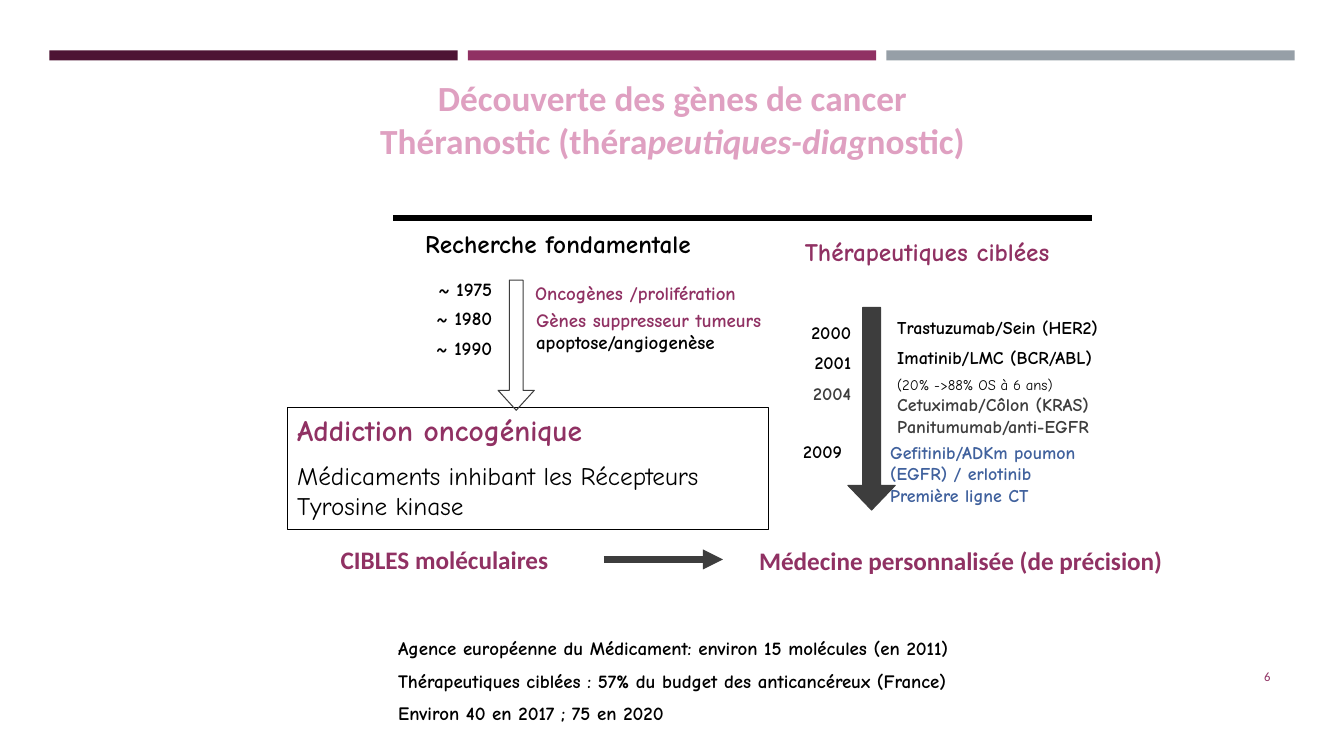
from lxml import etree
from pptx import Presentation
from pptx.dml.color import RGBColor
from pptx.enum import shapes, text
from pptx.oxml import ns
from pptx.util import Inches, Pt

COLORS = {
    "plum": "903163", "dark plum": "4D1434", "steel": "969FA7", "pink": "DFA0C1",
    "black": "000000", "charcoal": "3D3D3D", "blue": "40619D",
}
COMIC, CALIBRI = "Comic Neue", "Calibri"
LEFT, CENTER, RIGHT = text.PP_ALIGN.LEFT, text.PP_ALIGN.CENTER, text.PP_ALIGN.RIGHT
TOP, MIDDLE, BOTTOM = text.MSO_ANCHOR.TOP, text.MSO_ANCHOR.MIDDLE, text.MSO_ANCHOR.BOTTOM


def rgb(name):
    return RGBColor.from_string(COLORS[name])


def set_attributes(target, values):
    for name, value in values.items():
        setattr(target, name, value)


def entry(*runs, before=0, **font):
    """Describe a paragraph; a run is a string or a (string, font changes) pair."""
    return {"runs": runs, "before": before, "font": font}


def write(frame, entries, align=LEFT, anchor=TOP, wrap=True, spacing=1.0):
    set_attributes(frame, {"word_wrap": wrap, "vertical_anchor": anchor,
                           "auto_size": text.MSO_AUTO_SIZE.NONE})
    for index, item in enumerate(entries):
        paragraph = frame.add_paragraph() if index else frame.paragraphs[0]
        set_attributes(paragraph, {"alignment": align, "line_spacing": spacing,
                                   "space_before": Pt(item["before"])})
        for piece in item["runs"]:
            content, changes = piece if isinstance(piece, tuple) else (piece, {})
            style = {"name": COMIC, "size": 13.5, "bold": True, "color": "black",
                     **item["font"], **changes}
            color = style.pop("color")
            style["size"] = Pt(style["size"])
            for number, line in enumerate(content.split("\n")):
                if number:
                    paragraph.add_line_break()
                run = paragraph.add_run()
                run.text = line
                set_attributes(run.font, style)
                run.font.color.rgb = rgb(color)


def add_text(slide, box, *entries, **layout):
    shape = slide.shapes.add_textbox(*map(Inches, box))
    write(shape.text_frame, entries, **layout)


def add_shape(slide, kind, box, fill=None, line=None, adjustments=()):
    shape = slide.shapes.add_shape(kind, *map(Inches, box))
    shape.shadow.inherit = False
    for index, value in enumerate(adjustments):
        shape.adjustments[index] = value
    if fill:
        shape.fill.solid()
        shape.fill.fore_color.rgb = rgb(fill)
    else:
        shape.fill.background()
    if line:
        shape.line.color.rgb = rgb(line)
        shape.line.width = Pt(0.75)
    else:
        shape.line.fill.background()
    return shape


def add_line(slide, left, right, height, color, width, arrow=False):
    line = slide.shapes.add_connector(
        shapes.MSO_CONNECTOR.STRAIGHT, *map(Inches, (left, height, right, height)))
    line.line.color.rgb = rgb(color)
    line.line.width = Pt(width)
    if arrow:
        etree.SubElement(line.line._get_or_add_ln(), ns.qn("a:tailEnd"), type="triangle")
    etree.SubElement(line._element.spPr, ns.qn("a:effectLst"))


def add_header(slide):
    for index, color in enumerate(("dark plum", "plum", "steel")):
        add_shape(slide, shapes.MSO_SHAPE.RECTANGLE,
                  (0.49 + 4.15 * index, 0.5, 4.05, 0.1), color)
    title = slide.shapes.title
    set_attributes(title, {"left": Inches(0.64), "top": Inches(0.7),
                           "width": Inches(12.06), "height": Inches(0.95)})
    heading = entry("Découverte des gènes de cancer\nThéranostic (théra",
                    ("peutiques-diag", {"italic": True}), "nostic)",
                    name=CALIBRI, size=25.2, color="pink")
    write(title.text_frame, [heading], align=CENTER, anchor=BOTTOM)
    add_line(slide, 3.9, 10.83, 2.16, "black", 4.5)


def add_research(slide):
    add_text(slide, (3.9, 2.22, 3.27, 0.4),
             entry("Recherche fondamentale", size=18), align=CENTER)
    for year, top in (("~ 1975", 2.71), ("~ 1980", 2.99), ("~ 1990", 3.29)):
        add_text(slide, (3.96, top, 1.02, 0.33), entry(year), align=RIGHT)
    add_text(slide, (5.21, 2.74, 2.52, 0.33),
             entry("Oncogènes /prolifération", color="plum"))
    add_text(slide, (5.22, 3.01, 2.87, 0.6),
             entry(("Gènes suppresseur tumeurs\n", {"color": "plum"}),
                   "apoptose/angiogenèse"))
    addiction = add_shape(slide, shapes.MSO_SHAPE.RECTANGLE,
                          (2.85, 4.04, 4.77, 1.21), line="black")
    write(addiction.text_frame, [
        entry("Addiction oncogénique", size=21, color="plum"),
        entry("Médicaments inhibant les Récepteurs\nTyrosine kinase",
              size=18, bold=False, before=9)])
    add_shape(slide, shapes.MSO_SHAPE.DOWN_ARROW, (4.94, 2.78, 0.36, 1.29),
              line="charcoal", adjustments=(0.38, 0.55))


def add_therapies(slide):
    drug = {"size": 12.8}
    add_text(slide, (7.85, 2.3, 2.69, 0.4),
             entry("Thérapeutiques ciblées", size=18, color="plum"), align=CENTER)
    add_text(slide, (7.44, 3.14, 1.1, 0.96),
             entry("2000", **drug), entry("2001", before=6.5, **drug),
             entry("2004", before=6.5, color="charcoal", **drug), align=RIGHT)
    add_text(slide, (7.43, 4.32, 1.02, 0.32), entry("2009", **drug), align=RIGHT)
    add_text(slide, (8.8, 3.09, 2.61, 1.33),
             entry("Trastuzumab/Sein (HER2)", **drug),
             entry("Imatinib/LMC (BCR/ABL)", before=6.5, **drug),
             entry("(20% ->88% OS à 6 ans)", before=5.5, size=10.5, bold=False),
             entry("Cetuximab/Côlon (KRAS)", color="charcoal", **drug),
             entry("Panitumumab/anti-EGFR", color="charcoal", **drug))
    add_shape(slide, shapes.MSO_SHAPE.DOWN_ARROW, (8.41, 3.05, 0.47, 2.01),
              "charcoal", "charcoal", (0.38, 0.52))
    first_line = ("Gefitinib/ADKm poumon", "(EGFR) / erlotinib", "Première ligne CT")
    add_text(slide, (8.73, 4.33, 2.48, 0.8),
             *(entry(line, color="blue", **drug) for line in first_line))


def add_conclusion(slide):
    goal = {"name": CALIBRI, "size": 18, "color": "plum"}
    add_text(slide, (3.28, 5.44, 2.72, 0.6),
             entry("CIBLES moléculaires", **goal), spacing=0.65)
    add_line(slide, 5.99, 7.17, 5.55, "charcoal", 4.75, arrow=True)
    add_text(slide, (7.43, 5.36, 4.37, 0.4),
             entry("Médecine personnalisée (de précision)", **goal), wrap=False)
    facts = ("Agence européenne du Médicament: environ 15 molécules (en 2011)",
             "Thérapeutiques ciblées : 57% du budget des anticancéreux (France)",
             "Environ 40 en 2017 ; 75 en 2020")
    add_text(slide, (3.85, 6.27, 8.15, 1.01),
             *(entry(fact, before=7 if index else 0) for index, fact in enumerate(facts)))
    add_text(slide, (11.55, 6.51, 1.15, 0.4),
             entry("6", name=CALIBRI, size=9, bold=False, color="plum"),
             align=RIGHT, anchor=MIDDLE)


def main():
    presentation = Presentation()
    presentation.slide_width = Inches(13.33)
    presentation.slide_height = Inches(7.5)
    slide = presentation.slides.add_slide(presentation.slide_layouts[5])
    add_header(slide)
    add_research(slide)
    add_therapies(slide)
    add_conclusion(slide)
    presentation.save("out.pptx")


if __name__ == "__main__":
    main()
